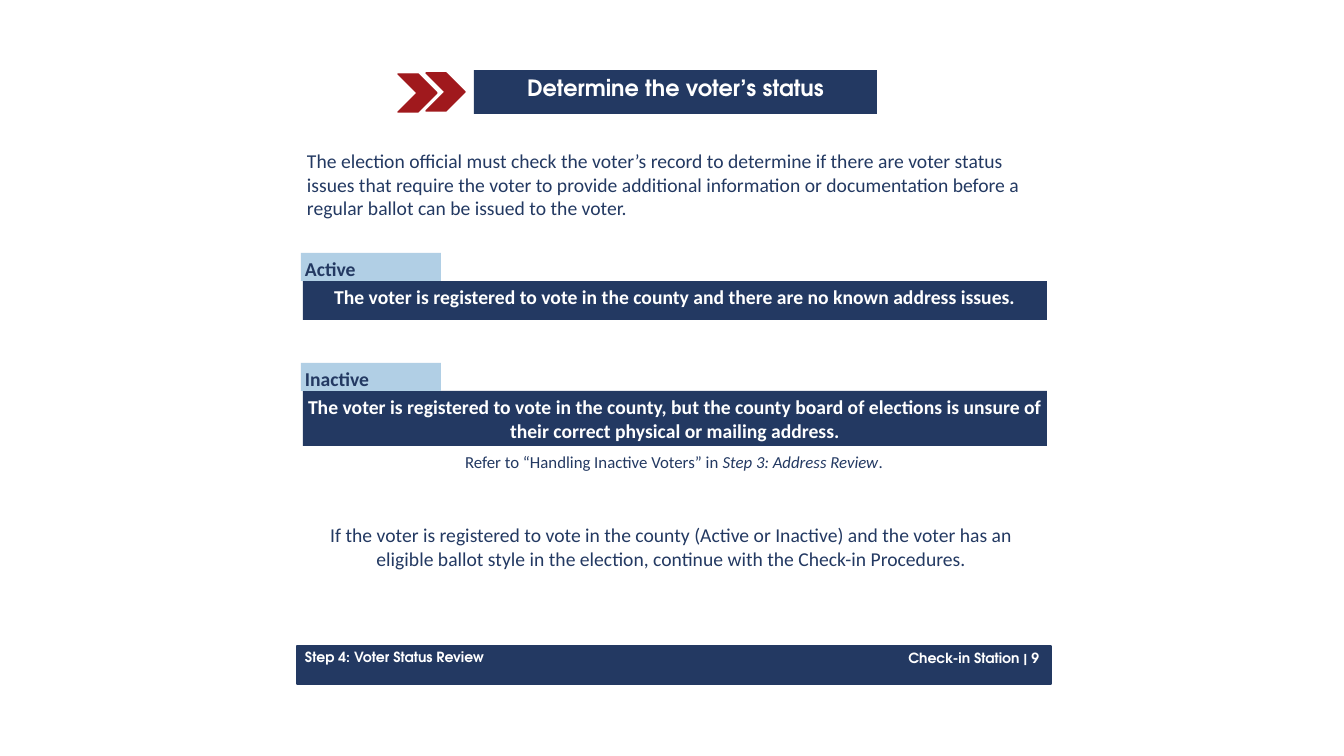
import pptx
import pptx.dml.color
import pptx.enum.shapes
import pptx.enum.text
import pptx.util

EMU_PER_PX = 914400 / 100.8
NAVY, SKY, RED, WHITE = "233962", "B1CFE5", "A0191D", "FFFFFF"
BODY_FONT, HEADING_FONT = "Calibri", "TeX Gyre Adventor"
SHAPE = pptx.enum.shapes.MSO_SHAPE
ALIGN = pptx.enum.text.PP_ALIGN
TIGHT, ROOMY = (4, 4), (10, 5)


def px(length):
    return pptx.util.Emu(round(length * EMU_PER_PX))


def color(hex_string):
    return pptx.dml.color.RGBColor.from_string(hex_string)


class SlideBuilder:
    def __init__(self, slide):
        self.slide = slide

    def block(self, box, fill, preset=SHAPE.RECTANGLE, outline=0):
        """Add a filled shape; outline is a width in points, 0 for none."""
        shape = self.slide.shapes.add_shape(preset, *map(px, box))
        shape.shadow.inherit = False
        shape.fill.solid()
        shape.fill.fore_color.rgb = color(fill)
        if outline:
            shape.line.color.rgb = color(fill)
            shape.line.width = pptx.util.Pt(outline)
        else:
            shape.line.fill.background()
        return shape

    def put_text(self, shape, runs, size=14, ink=NAVY, font=BODY_FONT,
                 bold=False, align=ALIGN.LEFT, insets=TIGHT):
        """Fill a shape with one paragraph; runs are (text, italic) pairs or a string."""
        frame = shape.text_frame
        frame.word_wrap = True
        frame.vertical_anchor = pptx.enum.text.MSO_ANCHOR.TOP
        frame.margin_left = frame.margin_right = px(insets[0])
        frame.margin_top = frame.margin_bottom = px(insets[1])
        paragraph = frame.paragraphs[0]
        paragraph.alignment = align
        paragraph.font.size = pptx.util.Pt(size)
        paragraph.font.name = font
        paragraph.font.bold = bold
        paragraph.font.color.rgb = color(ink)
        for text, italic in [(runs, False)] if isinstance(runs, str) else runs:
            run = paragraph.add_run()
            run.text = text
            if italic:
                run.font.italic = True

    def text(self, box, runs, **style):
        self.put_text(self.slide.shapes.add_textbox(*map(px, box)), runs, **style)

    def banner(self, box, text, **style):
        self.put_text(self.block(box, NAVY), text, ink=WHITE, bold=True,
                      align=ALIGN.CENTER, **style)

    def status(self, top, height, label, meaning):
        """Add a status tab with the bar that explains it below."""
        self.banner((303, top + 28, 744, height), meaning)
        self.put_text(self.block((301, top, 140, 28), SKY), label, bold=True)

    def footer(self, step, page):
        style = dict(size=10, ink=WHITE, font=HEADING_FONT, bold=True)
        self.block((297, 646, 754, 38), NAVY, outline=2)
        self.text((295, 644, 502, 27), step, insets=ROOMY, **style)
        self.text((425, 645, 622, 39), page, align=ALIGN.RIGHT, **style)


def main():
    deck = pptx.Presentation()
    deck.slide_width, deck.slide_height = px(1344), px(756)
    page = SlideBuilder(deck.slides.add_slide(deck.slide_layouts[6]))

    for left, top in ((426, 73), (398, 74)):
        page.block((left, top, 39, 38), RED, SHAPE.CHEVRON, outline=1)
    page.banner((474, 70, 403, 44), "Determine the voter’s status",
                size=16, font=HEADING_FONT)
    page.text((303, 145, 739, 78),
              "The election official must check the voter’s record to determine if "
              "there are voter status issues that require the voter to provide "
              "additional information or documentation before a regular ballot can "
              "be issued to the voter.")

    page.status(253, 39, "Active",
                "The voter is registered to vote in the county and there are no "
                "known address issues.")
    page.status(363, 55, "Inactive",
                "The voter is registered to vote in the county, but the county board "
                "of elections is unsure of their correct physical or mailing address.")
    page.text((419, 447, 510, 30),
              [("Refer to “Handling Inactive Voters” in ", False),
               ("Step 3: Address Review", True), (".", False)],
              size=12, align=ALIGN.CENTER, insets=ROOMY)

    page.text((302, 518, 739, 57),
              "If the voter is registered to vote in the county (Active or Inactive) "
              "and the voter has an eligible ballot style in the election, continue "
              "with the Check-in Procedures.", align=ALIGN.CENTER, insets=ROOMY)
    page.footer("Step 4: Voter Status Review", "Check-in Station | 9 ")
    deck.save("out.pptx")


if __name__ == "__main__":
    main()
